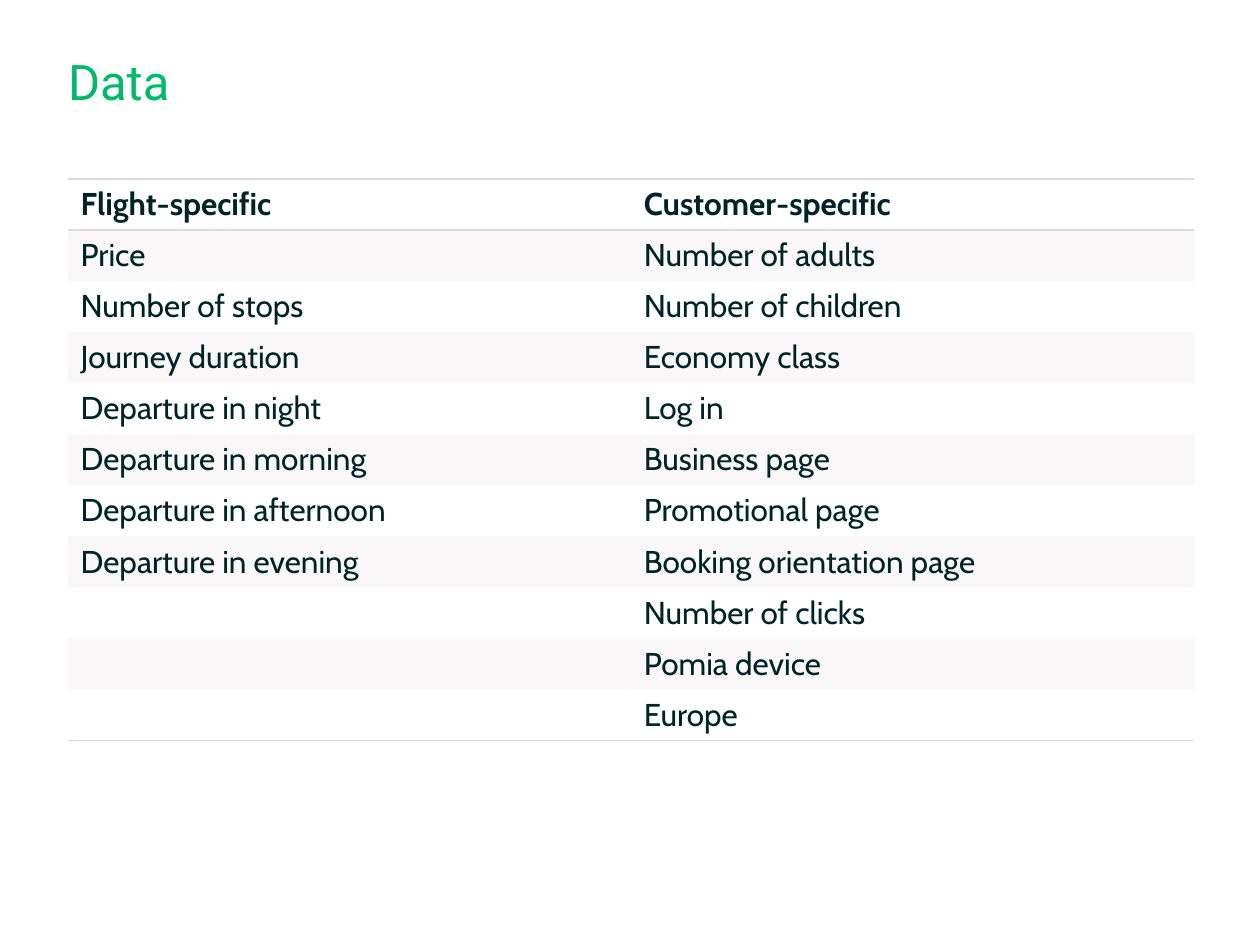
import pptx
import pptx.dml.color
import pptx.enum.text
import pptx.oxml
import pptx.oxml.ns
import pptx.util
from pptx.util import Inches

GREEN, INK, SAND = "00B969", "002328", "E3DAD8"
NO_STYLE = "{2D5ABB26-0587-4C30-8999-92F81FD0307C}"
LEFT, WIDTH = 0.54, 8.94

FLIGHT = ["Flight-specific", "Price", "Number of stops", "Journey duration",
          "Departure in night", "Departure in morning",
          "Departure in afternoon", "Departure in evening"]
CUSTOMER = ["Customer-specific", "Number of adults", "Number of children",
            "Economy class", "Log in", "Business page", "Promotional page",
            "Booking orientation page", "Number of clicks", "Pomia device",
            "Europe"]


def color(value):
    return pptx.dml.color.RGBColor.from_string(value)


def xml(text):
    """Build an element from a DrawingML fragment with the a: prefix."""
    ns = pptx.oxml.ns.nsdecls("a")
    return pptx.oxml.parse_xml(text.replace(">", f" {ns}>", 1))


class Deck:
    """Holds the text styles and the current slide."""

    title_style = {"name": "Roboto", "size": pptx.util.Pt(28), "bold": False}
    cell_style = {"name": "Cabin", "size": pptx.util.Pt(18), "bold": False}

    def __init__(self, prs):
        self.s = prs.slides.add_slide(prs.slide_layouts[6])

    def add_text(self, p, text, style, ink):
        r = p.add_run()
        r.text = text
        for key, value in style.items():
            setattr(r.font, key, value)
        r.font.color.rgb = color(ink)

    def title(self, text, top, height):
        sp = self.s.shapes.add_textbox(Inches(LEFT), Inches(top),
                                       Inches(WIDTH), Inches(height))
        tf = sp.text_frame
        frame = {"word_wrap": True, "margin_left": 0, "margin_right": 0,
                 "margin_top": 0, "margin_bottom": 0,
                 "vertical_anchor": pptx.enum.text.MSO_ANCHOR.TOP}
        for key, value in frame.items():
            setattr(tf, key, value)
        p = tf.paragraphs[0]
        p.line_spacing = pptx.util.Pt(32)
        self.add_text(p, text, self.title_style, GREEN)

    def rule(self, cell, side):
        """Draw one horizontal cell border; side is T or B."""
        cell._tc.get_or_add_tcPr().append(xml(
            f'<a:ln{side} w="12700"><a:solidFill><a:srgbClr val="{SAND}"/>'
            f'</a:solidFill></a:ln{side}>'))

    def shade(self, cell):
        cell.fill.solid()
        cell.fill.fore_color.rgb = color(SAND)
        fill = cell._tc.tcPr.find(pptx.oxml.ns.qn("a:solidFill"))
        fill[0].append(xml('<a:alpha val="20000"></a:alpha>'))

    def table(self, columns, top, height):
        rows = max(len(column) for column in columns)
        frame = self.s.shapes.add_table(rows, len(columns), Inches(LEFT),
                                        Inches(top), Inches(WIDTH),
                                        Inches(height))
        table = frame.table
        table.horz_banding = False
        style_id = table._tbl.tblPr.find(pptx.oxml.ns.qn("a:tableStyleId"))
        style_id.text = NO_STYLE
        for j, column in enumerate(columns):
            for i in range(rows):
                cell = table.cell(i, j)
                if i == 0:
                    self.rule(cell, "T")
                if i in (0, rows - 1):
                    self.rule(cell, "B")
                if i % 2:
                    self.shade(cell)
                else:
                    cell.fill.background()
                if i < len(column):
                    self.add_text(cell.text_frame.paragraphs[0], column[i],
                                  {**self.cell_style, "bold": i == 0}, INK)


def main():
    prs = pptx.Presentation()
    prs.slide_width, prs.slide_height = Inches(10), Inches(7.5)
    deck = Deck(prs)
    deck.title("Data", 0.43, 0.91)
    deck.table([FLIGHT, CUSTOMER], 1.42, 4.46)
    prs.save("out.pptx")


if __name__ == "__main__":
    main()
